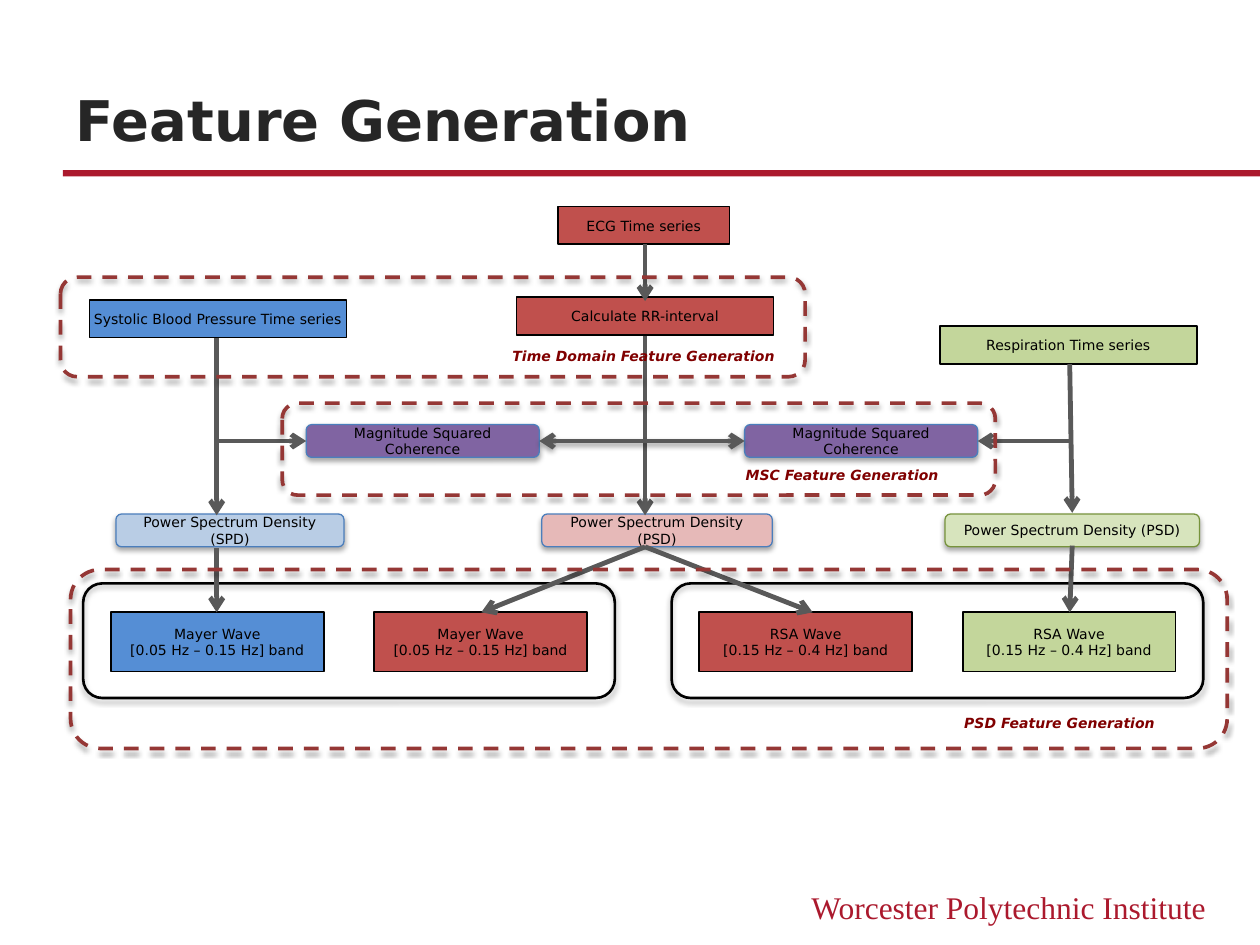
import pptx
import pptx.dml.color
import pptx.enum.dml
import pptx.enum.shapes
import pptx.enum.text
import pptx.oxml
import pptx.oxml.ns
import pptx.util
from pptx.util import Inches

RGBColor = pptx.dml.color.RGBColor
CRIMSON = RGBColor(0xAB, 0x19, 0x2D)
TITLE_GRAY = RGBColor(0x26, 0x26, 0x26)
ARROW_GRAY = RGBColor(0x59, 0x59, 0x59)
BLACK = RGBColor(0, 0, 0)
RED = RGBColor(0xC0, 0x50, 0x4D)
PALE_RED = RGBColor(0xE6, 0xB9, 0xB8)
BLUE = RGBColor(0x55, 0x8E, 0xD5)
PALE_BLUE = RGBColor(0xB9, 0xCD, 0xE5)
EDGE_BLUE = RGBColor(0x4B, 0x7E, 0xBC)
GREEN = RGBColor(0xC3, 0xD6, 0x9B)
PALE_GREEN = RGBColor(0xD7, 0xE4, 0xBD)
EDGE_GREEN = RGBColor(0x77, 0x93, 0x3C)
PURPLE = RGBColor(0x80, 0x64, 0xA2)
FRAME_RED = RGBColor(0x95, 0x37, 0x35)
CAPTION_RED = RGBColor(0x80, 0, 0)

SANS = "DejaVu Sans"
SERIF = "Times New Roman"
SHAPES = pptx.enum.shapes.MSO_SHAPE
ALIGN = pptx.enum.text.PP_ALIGN
ANCHOR = pptx.enum.text.MSO_ANCHOR


def write(frame, text, size, color, align=ALIGN.CENTER, font=SANS, bold=False, italic=False):
    frame.word_wrap = True
    frame.text = text
    for paragraph in frame.paragraphs:
        paragraph.alignment = align
        paragraph.font.name = font
        paragraph.font.size = pptx.util.Pt(size)
        paragraph.font.color.rgb = color
        paragraph.font.bold = bold
        paragraph.font.italic = italic


def set_effects(drawn, shadow):
    """Give a shape or connector a soft drop shadow, or none at all."""
    outer = ('<a:outerShdw blurRad="39370" dist="22860" dir="5400000" rotWithShape="0">'
             '<a:srgbClr val="000000"><a:alpha val="35000"/></a:srgbClr></a:outerShdw>')
    drawn._element.spPr.append(pptx.oxml.parse_xml(
        f'<a:effectLst {pptx.oxml.ns.nsdecls("a")}>{outer if shadow else ""}</a:effectLst>'))


def add_block(slide, box, kind, fill=None, edge=None, weight=1, shadow=False):
    block = slide.shapes.add_shape(kind, *map(Inches, box))
    if fill is None:
        block.fill.background()
    else:
        block.fill.solid()
        block.fill.fore_color.rgb = fill
    if edge is None:
        block.line.fill.background()
    else:
        block.line.color.rgb = edge
        block.line.width = pptx.util.Pt(weight)
    set_effects(block, shadow)
    return block


def add_data_box(slide, box, text, fill):
    frame = add_block(slide, box, SHAPES.RECTANGLE, fill, BLACK).text_frame
    frame.margin_left = frame.margin_right = frame.margin_top = frame.margin_bottom = 0
    frame.vertical_anchor = ANCHOR.MIDDLE
    write(frame, text, 8, BLACK)


def add_process(slide, box, text, fill, edge=EDGE_BLUE):
    process = add_block(slide, box, SHAPES.ROUNDED_RECTANGLE, fill, edge, 0.75, True)
    process.text_frame.vertical_anchor = ANCHOR.MIDDLE
    write(process.text_frame, text, 8, BLACK)


def add_arrow(slide, start, end, both_ends=False):
    arrow = slide.shapes.add_connector(
        pptx.enum.shapes.MSO_CONNECTOR.STRAIGHT, *map(Inches, start + end))
    arrow.line.color.rgb = ARROW_GRAY
    arrow.line.width = pptx.util.Pt(2.75)
    for tag in ("headEnd", "tailEnd") if both_ends else ("tailEnd",):
        arrow.line._get_or_add_ln().append(pptx.oxml.parse_xml(
            f'<a:{tag} {pptx.oxml.ns.nsdecls("a")} type="arrow"/>'))
    set_effects(arrow, both_ends)


def add_heading(slide, box):
    left, top, width, height = box
    title = slide.shapes.title
    title.left, title.top, title.width, title.height = map(Inches, box)
    title.text_frame.auto_size = pptx.enum.text.MSO_AUTO_SIZE.NONE
    title.text_frame.vertical_anchor = ANCHOR.BOTTOM
    write(title.text_frame, "Feature Generation", 32, TITLE_GRAY, ALIGN.LEFT, bold=True)
    rule = (left, top + height + 0.09, 10 - left, 0.05)
    add_block(slide, rule, SHAPES.RECTANGLE, CRIMSON)


def add_footer(slide, box):
    institute = slide.shapes.add_textbox(*map(Inches, box))
    write(institute.text_frame, "Worcester Polytechnic Institute", 18, CRIMSON,
          ALIGN.RIGHT, SERIF)


def add_time_series(slide, box):
    left, top, width, height = box
    for dx, dy, box_width, text, fill in (
            (3.72, 0, 1.36, "ECG Time series", RED),
            (3.39, 0.72, 2.04, "Calculate RR-interval", RED),
            (0, 0.74, 2.04, "Systolic Blood Pressure Time series", BLUE),
            (width - 2.04, 0.95, 2.04, "Respiration Time series", GREEN)):
        add_data_box(slide, (left + dx, top + dy, box_width, 0.3), text, fill)


def add_coherence(slide, box):
    left, top, width, height = box
    for x in (left, left + width - 1.85):
        add_process(slide, (x, top, 1.85, height), "Magnitude Squared Coherence", PURPLE)


def add_spectra(slide, box):
    left, top, width, height = box
    for dx, box_width, name, fill, edge in (
            (0, 1.81, "SPD", PALE_BLUE, EDGE_BLUE),
            (3.38, 1.83, "PSD", PALE_RED, EDGE_BLUE),
            (width - 2.02, 2.02, "PSD", PALE_GREEN, EDGE_GREEN)):
        add_process(slide, (left + dx, top, box_width, height),
                    f"Power Spectrum Density ({name})", fill, edge)


def add_band_panel(slide, box, text, fills):
    left, top, width, height = box
    add_block(slide, box, SHAPES.ROUNDED_RECTANGLE, None, BLACK, 1.5, True)
    for column, fill in enumerate(fills):
        add_data_box(slide, (left + 0.22 + 2.09 * column, top + 0.23, 1.69, 0.47), text, fill)


def add_flow(slide, box):
    """Arrows joining the rows, from the ECG box down to the bands."""
    left, top, width, height = box
    pressure, rr, respiration = left, left + 3.4, left + width
    middle, spectra, bands = top + 1.56, top + 2.15, top + height
    add_arrow(slide, (rr, top), (rr, top + 0.45))
    add_arrow(slide, (pressure, top + 0.74), (pressure, spectra))
    add_arrow(slide, (rr, top + 0.73), (rr, spectra))
    add_arrow(slide, (respiration, top + 0.95), (respiration + 0.02, spectra - 0.02))
    add_arrow(slide, (pressure, middle), (pressure + 0.71, middle))
    add_arrow(slide, (respiration, middle), (respiration - 0.73, middle))
    add_arrow(slide, (rr - 0.84, middle), (rr + 0.79, middle), both_ends=True)
    add_arrow(slide, (pressure, spectra + 0.26), (pressure, bands))
    for dx in (-1.3, 1.33):
        add_arrow(slide, (rr, spectra + 0.25), (rr + dx, bands))
    add_arrow(slide, (respiration + 0.02, spectra + 0.24), (respiration, bands))


def add_feature_frame(slide, box, name, caption_width, right_gap=0, bottom_gap=0.04):
    left, top, width, height = box
    frame = add_block(slide, box, SHAPES.ROUNDED_RECTANGLE, None, FRAME_RED, 2.1, True)
    frame.line.dash_style = pptx.enum.dml.MSO_LINE.DASH
    caption = slide.shapes.add_textbox(
        Inches(left + width - right_gap - caption_width),
        Inches(top + height - bottom_gap - 0.24), Inches(caption_width), Inches(0.24))
    write(caption.text_frame, f"{name} Feature Generation", 8, CAPTION_RED,
          bold=True, italic=True)


def main():
    deck = pptx.Presentation()
    deck.slide_width, deck.slide_height = Inches(10), Inches(7.5)
    slide = deck.slides.add_slide(deck.slide_layouts[5])
    add_heading(slide, (0.5, 0.38, 9, 0.88))
    add_footer(slide, (6, 7, 3.67, 0.4))
    add_time_series(slide, (0.71, 1.64, 8.79, 1.25))
    add_coherence(slide, (2.43, 3.37, 5.33, 0.26))
    add_spectra(slide, (0.92, 4.08, 8.6, 0.26))
    add_band_panel(slide, (0.66, 4.63, 4.22, 0.91),
                   "Mayer Wave\n[0.05 Hz – 0.15 Hz] band", (BLUE, RED))
    add_band_panel(slide, (5.33, 4.63, 4.22, 0.91),
                   "RSA Wave\n[0.15 Hz – 0.4 Hz] band", (RED, GREEN))
    add_flow(slide, (1.72, 1.94, 6.77, 2.92))
    add_feature_frame(slide, (0.48, 2.2, 5.91, 0.79), "Time Domain", 2.56)
    add_feature_frame(slide, (2.24, 3.2, 5.66, 0.73), "MSC", 2.43)
    add_feature_frame(slide, (0.56, 4.52, 9.18, 1.42), "PSD", 2.18, 0.24, 0.08)
    deck.save("out.pptx")


if __name__ == "__main__":
    main()
